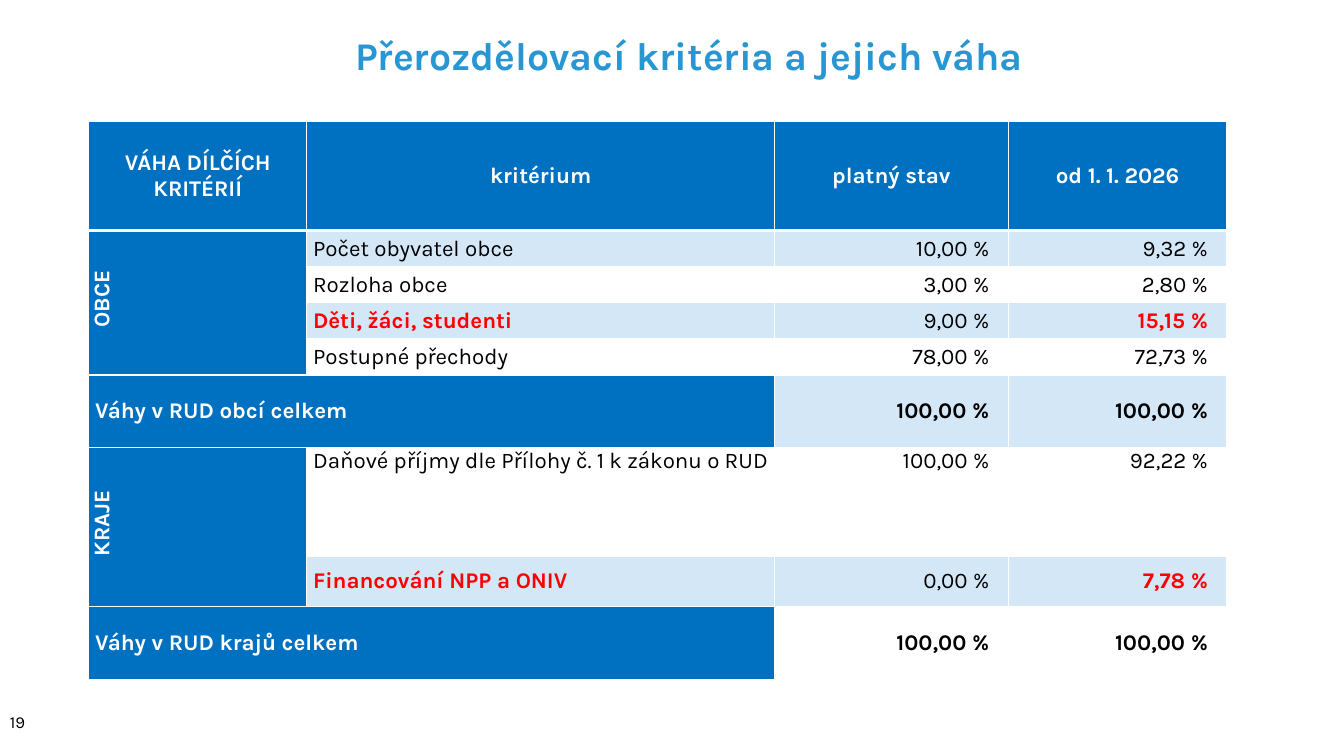
from lxml.etree import SubElement as Sub
from pptx import Presentation
from pptx.dml.color import RGBColor
from pptx.enum.text import MSO_VERTICAL_ANCHOR as Anchor, PP_PARAGRAPH_ALIGNMENT as Align
from pptx.oxml.ns import qn
from pptx.util import Cm, Pt

BLUE, LIGHT, WHITE, BLACK, RED = "0070C0", "D4E7F7", "FFFFFF", "000000", "FF0000"
WIDTHS = [5.49, 11.79, 5.89, 5.51]
HEIGHTS = [2.74] + [0.91] * 4 + [1.83, 2.74, 1.27, 1.83]
ROWS = [
    ["VÁHA DÍLČÍCH KRITÉRIÍ", "kritérium", "platný stav", "od 1. 1. 2026"],
    ["OBCE", "Počet obyvatel obce", "10,00 %", "9,32 %"],
    ["", "Rozloha obce", "3,00 %", "2,80 %"],
    ["", "Děti, žáci, studenti", "9,00 %", "15,15 %"],
    ["", "Postupné přechody", "78,00 %", "72,73 %"],
    ["Váhy v RUD obcí celkem", "", "100,00 %", "100,00 %"],
    ["KRAJE", "Daňové příjmy dle Přílohy č. 1 k zákonu o RUD", "100,00 %", "92,22 %"],
    ["", "Financování NPP a ONIV", "0,00 %", "7,78 %"],
    ["Váhy v RUD krajů celkem", "", "100,00 %", "100,00 %"],
]
SPANS = [(1, 0, 4, 0), (5, 0, 5, 1), (6, 0, 7, 0), (8, 0, 8, 1)]
GROUPS, TOTALS, TOP_ROW = (1, 6), (5, 8), 6
NEW = {(3, 1), (3, 3), (7, 1), (7, 3)}


def color(code):
    return RGBColor.from_string(code)


class Deck:
    font = "Karla"

    def __init__(self):
        self.prs = Presentation()
        self.prs.slide_width, self.prs.slide_height = Cm(33.87), Cm(19.05)
        self.slide = self.prs.slides.add_slide(self.prs.slide_layouts[5])

    def style(self, par, text, size, code, bold=False, align=Align.LEFT):
        par.text, par.alignment = text, align
        par.font.name, par.font.size, par.font.bold = self.font, Pt(size), bold
        par.font.color.rgb = color(code)

    def title(self, text, left, top, width, height):
        box = self.slide.shapes.title
        box.left, box.top, box.width, box.height = map(Cm, (left, top, width, height))
        frame = box.text_frame
        frame.word_wrap, frame.vertical_anchor = False, Anchor.MIDDLE
        frame.margin_left = Cm(0.5)
        self.style(frame.paragraphs[0], text, 28, "2896D3", True, Align.CENTER)

    def label(self, text, left, top, width, height):
        box = self.slide.shapes.add_textbox(*map(Cm, (left, top, width, height)))
        frame = box.text_frame
        frame.word_wrap, frame.vertical_anchor = True, Anchor.MIDDLE
        self.style(frame.paragraphs[0], text, 12, BLACK)

    def border(self, cell, row):
        props = cell._tc.get_or_add_tcPr()
        thick = {0: "lnB", 1: "lnT"}.get(row)
        for side in ("lnL", "lnR", "lnT", "lnB"):
            line = Sub(props, qn("a:" + side), w=str(Pt(3 if side == thick else 1)))
            Sub(Sub(line, qn("a:solidFill")), qn("a:srgbClr"), val=WHITE)

    def cell(self, cell, row, col, text):
        head = row == 0 or col == 0 or (row in TOTALS and col == 1)
        group = col == 0 and row in GROUPS
        self.border(cell, row)
        cell.fill.solid()
        cell.fill.fore_color.rgb = color(BLUE if head else LIGHT if row % 2 else WHITE)
        cell.margin_left = cell.margin_right = Cm(0.16)
        cell.margin_top = cell.margin_bottom = 0
        cell.vertical_anchor = Anchor.TOP if row == TOP_ROW and col else Anchor.MIDDLE
        if not text:
            return
        par = cell.text_frame.paragraphs[0]
        par.space_after = Pt(8 if group else 3)
        props = par._p.get_or_add_pPr()
        if group:
            cell._tc.get_or_add_tcPr().set("vert", "vert270")
            props.set("marL", str(Cm(0.2)))
        elif row and col > 1:
            props.set("marR", str(Cm(0.32)))
        align = Align.CENTER if row == 0 or group else Align.RIGHT if col > 1 else Align.JUSTIFY
        fresh = (row, col) in NEW
        code = WHITE if head else RED if fresh else BLACK
        self.style(par, text, 16, code, head or fresh or row in TOTALS, align)

    def table(self, rows, left, top):
        size = Cm(sum(WIDTHS)), Cm(sum(HEIGHTS))
        grid = self.slide.shapes.add_table(len(rows), len(WIDTHS), Cm(left), Cm(top), *size).table
        grid.first_row = grid.horz_banding = False
        for part, width in zip(grid.columns, WIDTHS):
            part.width = Cm(width)
        for part, height in zip(grid.rows, HEIGHTS):
            part.height = Cm(height)
        for row, texts in enumerate(rows):
            for col, text in enumerate(texts):
                self.cell(grid.cell(row, col), row, col, text)
        for top_row, first, low_row, last in SPANS:
            grid.cell(top_row, first).merge(grid.cell(low_row, last))


def main():
    deck = Deck()
    # Heading
    deck.title("Přerozdělovací kritéria a jejich váha", 2.24, 0, 30, 2.74)
    # Weights of the criteria
    deck.table(ROWS, 2.24, 3.07)
    # Page number
    deck.label("19", 0, 17.65, 1.22, 1.09)
    deck.prs.save("out.pptx")


if __name__ == "__main__":
    main()
